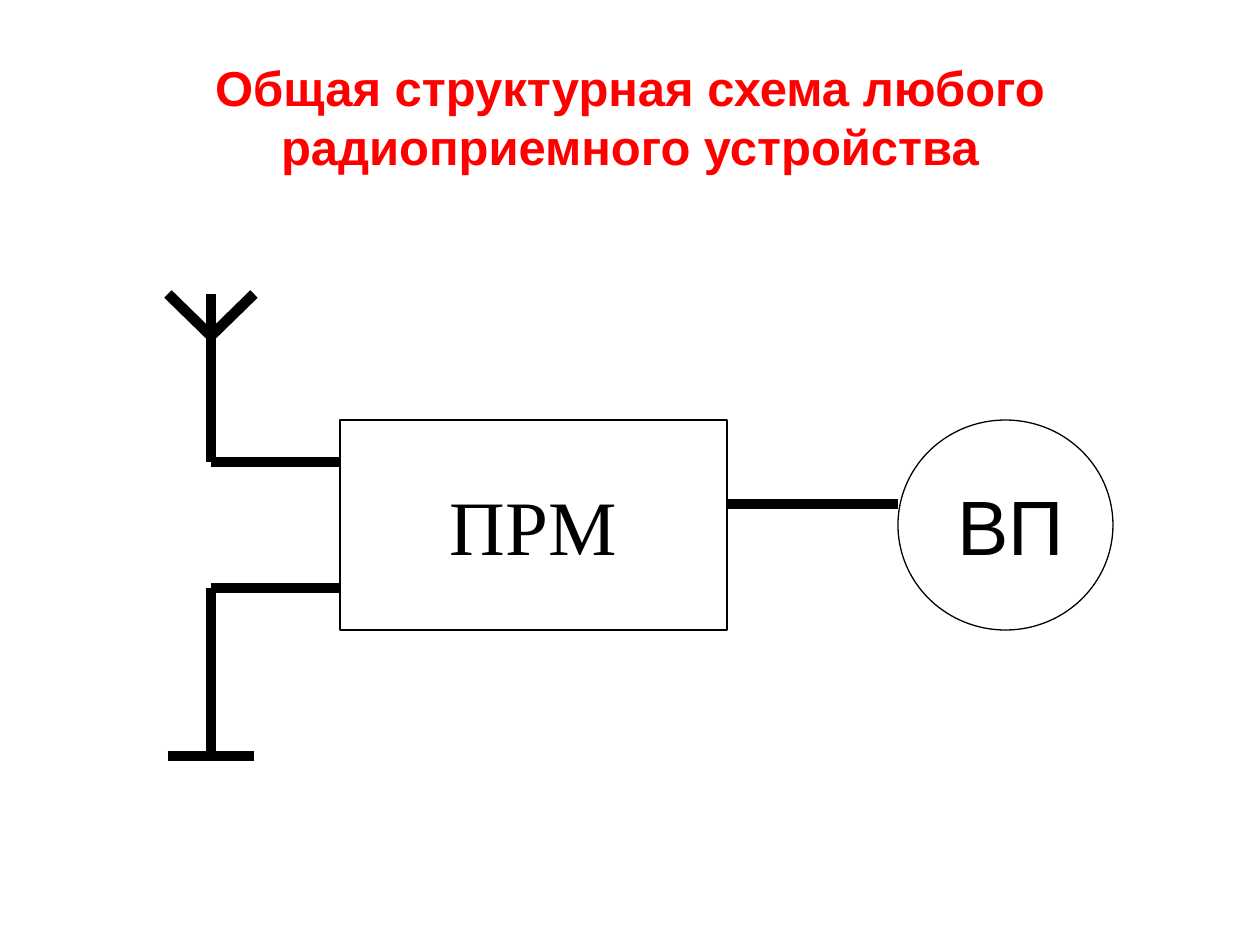
"""Builds a slide with the general block diagram of a radio receiver."""
from dataclasses import dataclass

from lxml.etree import SubElement
from pptx import Presentation
from pptx.dml.color import RGBColor
from pptx.enum.shapes import MSO_CONNECTOR, MSO_SHAPE
from pptx.enum.text import MSO_ANCHOR, MSO_AUTO_SIZE, PP_ALIGN
from pptx.oxml.ns import qn
from pptx.util import Pt

EMU_PER_PX = 914400 / 126


@dataclass(frozen=True)
class Theme:
    title: RGBColor = RGBColor(255, 0, 0)
    ink: RGBColor = RGBColor(0, 0, 0)
    paper: RGBColor = RGBColor(255, 255, 255)
    opacity: int = 34
    sans: str = "Arial"
    serif: str = "Times New Roman"
    title_size: int = 28
    label_size: int = 44
    outline: float = 0.75
    wire: int = 6


THEME = Theme()
TITLE = "Общая структурная схема любого радиоприемного устройства"
TITLE_AREA = (63, 38, 1134, 157)
RECEIVER = ("ПРМ", (340, 420, 387, 210))
OUTPUT = ("ВП", (898, 420, 215, 210), (945, 472, 132, 105))
MAST_X, ARM = 211, 43
ANTENNA_TOP, ANTENNA_FORK, GROUND_Y = 294, 336, 756
INPUT_Y, RETURN_Y, OUTPUT_Y = 462, 588, 504


def px(*values):
    return [round(value * EMU_PER_PX) for value in values]


def write(frame, text, *, size, font, color, bold=False, align=PP_ALIGN.CENTER, anchor=MSO_ANCHOR.MIDDLE):
    frame.vertical_anchor = anchor
    para = frame.paragraphs[0]
    para.alignment = align
    span = para.add_run()
    span.text = text
    span.font.size, span.font.name, span.font.bold = Pt(size), font, bold
    span.font.color.rgb = color


def add_block(group, kind, area):
    block = group.shapes.add_shape(kind, *px(*area))
    block.shadow.inherit = False
    block.fill.solid()
    block.fill.fore_color.rgb = THEME.paper
    color = block.fill._xPr.find(qn("a:solidFill"))[0]
    SubElement(color, qn("a:alpha"), val=str(THEME.opacity * 1000))
    block.line.color.rgb = THEME.ink
    block.line.width = Pt(THEME.outline)
    return block


def add_wire(group, start, end):
    wire = group.shapes.add_connector(MSO_CONNECTOR.STRAIGHT, *px(*start, *end))
    wire.line.color.rgb = THEME.ink
    wire.line.width = Pt(THEME.wire)
    SubElement(wire._element.spPr, qn("a:effectLst"))


def add_diagram(page):
    group = page.shapes.add_group_shape()
    name, area = RECEIVER
    receiver = add_block(group, MSO_SHAPE.RECTANGLE, area)
    write(receiver.text_frame, name, size=THEME.label_size, font=THEME.serif, color=THEME.ink)
    label, circle, label_area = OUTPUT
    add_block(group, MSO_SHAPE.OVAL, circle)

    left, right = area[0], area[0] + area[2]
    for wire_y, mast_end in ((INPUT_Y, ANTENNA_TOP), (RETURN_Y, GROUND_Y)):
        add_wire(group, (left, wire_y), (MAST_X, wire_y))
        add_wire(group, (MAST_X, wire_y), (MAST_X, mast_end))
    for side in (-ARM, ARM):
        add_wire(group, (MAST_X, ANTENNA_FORK), (MAST_X + side, ANTENNA_TOP))
    add_wire(group, (MAST_X - ARM, GROUND_Y), (MAST_X + ARM, GROUND_Y))
    add_wire(group, (circle[0], OUTPUT_Y), (right, OUTPUT_Y))

    box = page.shapes.add_textbox(*px(*label_area))
    box.text_frame.word_wrap = False
    box.text_frame.auto_size = MSO_AUTO_SIZE.SHAPE_TO_FIT_TEXT
    write(box.text_frame, label, size=THEME.label_size, font=THEME.sans, color=THEME.ink,
          align=PP_ALIGN.LEFT, anchor=MSO_ANCHOR.TOP)


def main():
    deck = Presentation()
    deck.slide_width, deck.slide_height = px(1260, 945)
    page = deck.slides.add_slide(deck.slide_layouts[5])
    title = page.shapes.title
    title.left, title.top, title.width, title.height = px(*TITLE_AREA)
    write(title.text_frame, TITLE, size=THEME.title_size, font=THEME.sans, color=THEME.title, bold=True)
    add_diagram(page)
    deck.save("out.pptx")


if __name__ == "__main__":
    main()
